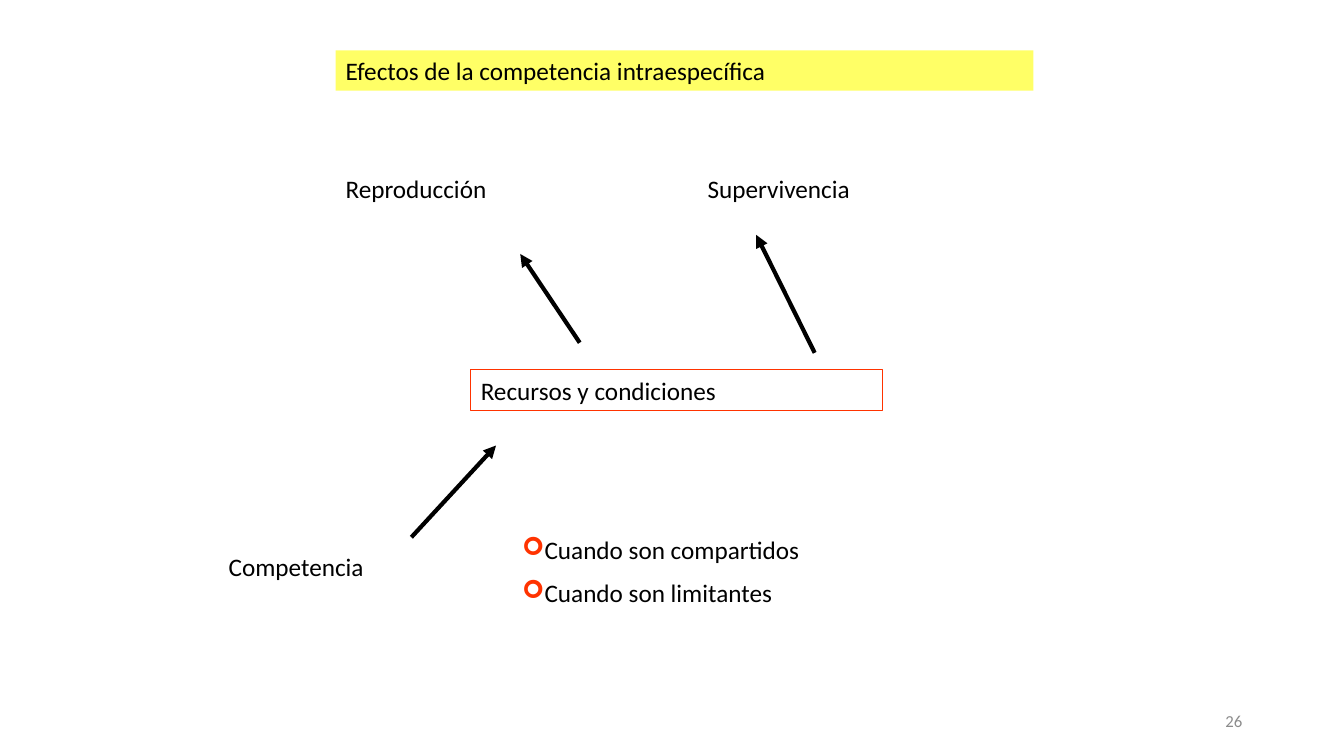
from dataclasses import dataclass

from lxml.etree import SubElement
from pptx import Presentation
from pptx.dml.color import RGBColor
from pptx.enum.shapes import MSO_CONNECTOR as Connector, MSO_SHAPE as Shape
from pptx.enum.text import MSO_ANCHOR as Anchor, PP_ALIGN as Align
from pptx.oxml.ns import qn
from pptx.slide import Slide
from pptx.util import Inches, Pt

FONT = "Calibri"
COLORS = {
    "text": "000000",
    "number": "8C8C8C",
    "title": "FFFF66",
    "white": "FFFFFF",
    "accent": "FF3300",
}


@dataclass(frozen=True)
class Label:
    text: str
    left: float
    top: float
    width: float
    height: float = 0.4
    fill: str | None = None
    line: str | None = None
    bullet: str | None = None
    size: int = 18
    color: str = "text"
    align: Align = Align.LEFT
    anchor: Anchor = Anchor.TOP


@dataclass(frozen=True)
class Arrow:
    start: tuple[float, float]
    end: tuple[float, float]


LABELS = [
    Label("26", 9.42, 6.95, 3, size=12, color="number",
          align=Align.RIGHT, anchor=Anchor.MIDDLE),
    Label("Efectos de la competencia intraespecífica", 3.33, 0.5, 6.92, fill="title"),
    Label("Reproducción", 3.33, 1.67, 3.17),
    Label("Supervivencia", 6.92, 1.67, 2.58),
    Label("Recursos y condiciones", 4.67, 3.67, 4.08, fill="white", line="accent"),
    Label("Competencia", 2.17, 5.42, 2.5),
    Label("Cuando son compartidos\nCuando son limitantes", 5.08, 5.25, 4.92, 0.86,
          bullet="➢"),
]

ARROWS = [
    Arrow((8.08, 3.5), (7.5, 2.33)),
    Arrow((5.75, 3.4), (5.16, 2.52)),
    Arrow((4.08, 5.33), (4.92, 4.42)),
]


def rgb(name: str) -> RGBColor:
    return RGBColor.from_string(COLORS[name])


def add_bullet(paragraph, character: str) -> None:
    properties = paragraph._p.get_or_add_pPr()
    color = SubElement(properties, qn("a:buClr"))
    SubElement(color, qn("a:srgbClr"), val=COLORS["accent"])
    SubElement(properties, qn("a:buFont"), typeface="Wingdings")
    SubElement(properties, qn("a:buChar"), char=character)


def add_label(slide: Slide, label: Label) -> None:
    """Add a plain text box, or a rectangle when the label has a fill."""
    box = [Inches(n) for n in (label.left, label.top, label.width, label.height)]
    if label.fill:
        shape = slide.shapes.add_shape(Shape.RECTANGLE, *box)
        shape.shadow.inherit = False
        shape.fill.solid()
        shape.fill.fore_color.rgb = rgb(label.fill)
        if label.line:
            shape.line.color.rgb = rgb(label.line)
            shape.line.width = Pt(0.75)
        else:
            shape.line.fill.background()
    else:
        shape = slide.shapes.add_textbox(*box)

    text_frame = shape.text_frame
    text_frame.text = label.text
    text_frame.word_wrap = True
    text_frame.vertical_anchor = label.anchor
    for index, paragraph in enumerate(text_frame.paragraphs):
        paragraph.alignment = label.align
        if index:
            paragraph.space_before = Pt(label.size / 2)
        if label.bullet:
            add_bullet(paragraph, label.bullet)
        for run in paragraph.runs:
            run.font.name = FONT
            run.font.size = Pt(label.size)
            run.font.color.rgb = rgb(label.color)


def add_arrow(slide: Slide, arrow: Arrow) -> None:
    points = [Inches(n) for n in (*arrow.start, *arrow.end)]
    connector = slide.shapes.add_connector(Connector.STRAIGHT, *points)
    connector.line.color.rgb = rgb("text")
    connector.line.width = Pt(3)
    SubElement(connector.line._get_or_add_ln(), qn("a:tailEnd"), type="triangle")
    SubElement(connector._element.spPr, qn("a:effectLst"))


def main() -> None:
    presentation = Presentation()
    presentation.slide_width = Inches(13.33)
    presentation.slide_height = Inches(7.5)
    slide = presentation.slides.add_slide(presentation.slide_layouts[6])
    for label in LABELS:
        add_label(slide, label)
    for arrow in ARROWS:
        add_arrow(slide, arrow)
    presentation.save("out.pptx")


if __name__ == "__main__":
    main()
